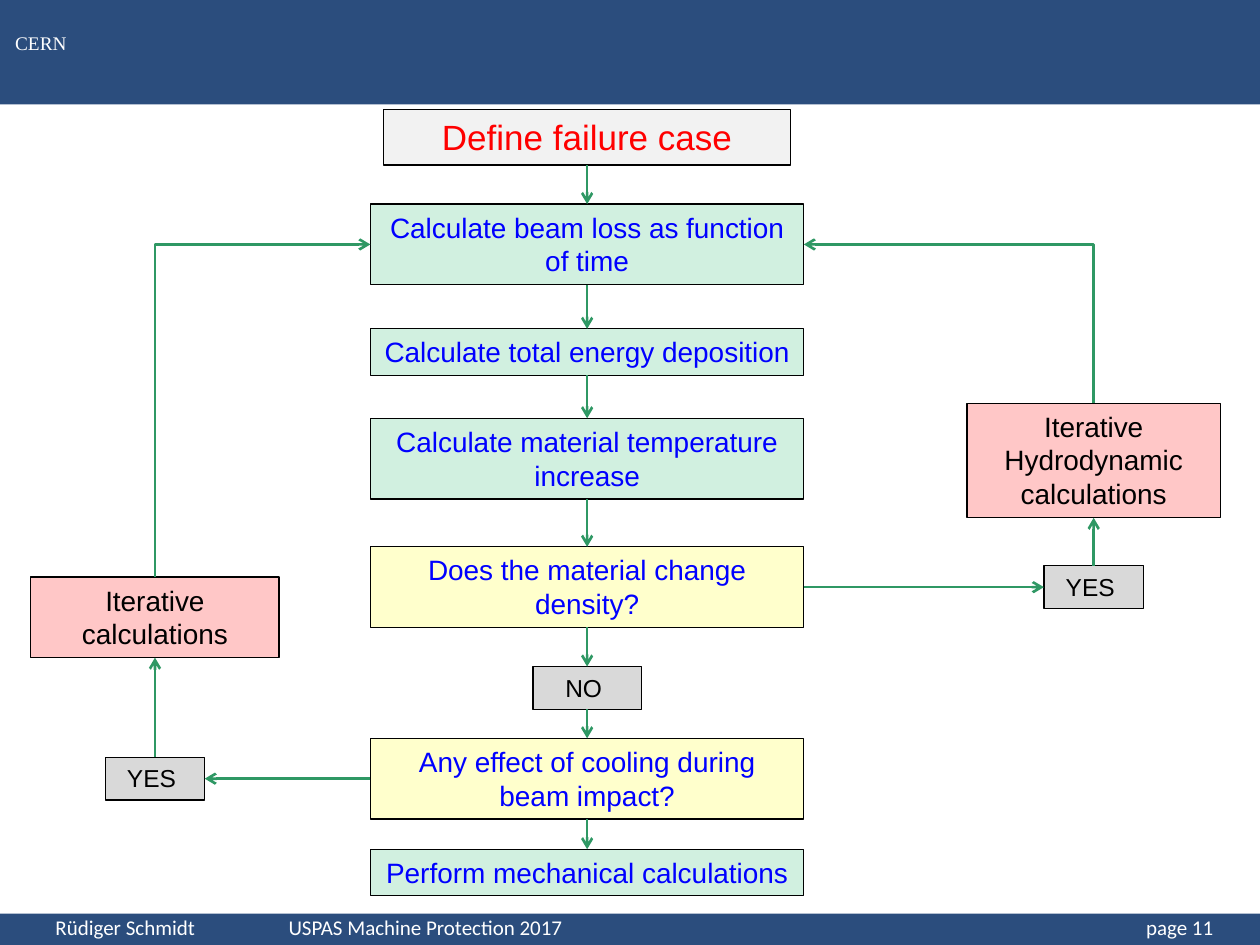
from dataclasses import dataclass

from lxml.etree import SubElement
from pptx import Presentation
from pptx.dml.color import RGBColor
from pptx.enum.shapes import MSO_CONNECTOR, MSO_SHAPE
from pptx.enum.text import MSO_ANCHOR, PP_ALIGN
from pptx.oxml.ns import qn
from pptx.util import Inches, Pt


@dataclass(frozen=True)
class Theme:
    band: str = "062F67"
    white: str = "FFFFFF"
    black: str = "000000"
    blue: str = "0000FF"
    red: str = "FF0000"
    start: str = "F2F2F2"
    step: str = "D1F0E0"
    question: str = "FFFFCC"
    answer: str = "D9D9D9"
    iteration: str = "FFC7C7"
    arrow: str = "2F9864"
    heading_size: int = 20
    step_size: int = 16
    answer_size: int = 14
    footer_size: int = 12
    mark_size: int = 11


theme = Theme()


def write_text(shape, text, size, color, font="Arial", align=PP_ALIGN.CENTER,
               anchor=MSO_ANCHOR.TOP, wrap=True, tabs=()):
    frame = shape.text_frame
    frame.word_wrap = wrap
    frame.vertical_anchor = anchor
    paragraph = frame.paragraphs[0]
    paragraph.text = text
    paragraph.alignment = align
    if tabs:
        tab_list = SubElement(paragraph._p.get_or_add_pPr(), qn("a:tabLst"))
        for position, kind in tabs:
            SubElement(tab_list, qn("a:tab"), pos=str(Inches(position)), algn=kind)
    paragraph.font.name = font
    paragraph.font.size = Pt(size)
    paragraph.font.color.rgb = RGBColor.from_string(color)


def connect(start, start_side, end, end_side, kind=MSO_CONNECTOR.STRAIGHT, arrow_end="a:tailEnd"):
    connector = slide.shapes.add_connector(kind, 0, 0, 0, 0)
    connector.begin_connect(start, start_side)
    connector.end_connect(end, end_side)
    connector.line.color.rgb = RGBColor.from_string(theme.arrow)
    connector.line.width = Pt(1.5)
    SubElement(connector.line._get_or_add_ln(), qn(arrow_end), type="arrow")
    SubElement(connector._element.spPr, qn("a:effectLst"))
    return connector


presentation = Presentation()
presentation.slide_width = Inches(10)
presentation.slide_height = Inches(7.5)
slide = presentation.slides.add_slide(presentation.slide_layouts[6])

for top, height in ((0, 0.83), (7.25, 0.25)):
    band = slide.shapes.add_shape(
        MSO_SHAPE.RECTANGLE, Inches(0), Inches(top), Inches(10), Inches(height))
    band.shadow.inherit = False
    band.fill.solid()
    band.fill.fore_color.rgb = RGBColor.from_string(theme.band)
    band_color = band._element.spPr.find(qn("a:solidFill")).find(qn("a:srgbClr"))
    SubElement(band_color, qn("a:alpha"), val="85000")
    band.line.fill.background()

mark = slide.shapes.add_textbox(Inches(0), Inches(0.2), Inches(0.65), Inches(0.29))
write_text(mark, "CERN", theme.mark_size, theme.white, font="Times New Roman", wrap=False)

footer = slide.shapes.add_textbox(Inches(0), Inches(7.25), Inches(9.83), Inches(0.26))
footer.text_frame.margin_left = Inches(0.44)
write_text(footer, "Rüdiger Schmidt\tUSPAS Machine Protection 2017\tpage 11",
           theme.footer_size, theme.white, font="Calibri", align=PP_ALIGN.LEFT,
           anchor=MSO_ANCHOR.BOTTOM, tabs=((1.85, "l"), (9.19, "r")))

styles = {
    "start": (theme.start, theme.red, theme.heading_size),
    "step": (theme.step, theme.blue, theme.step_size),
    "question": (theme.question, theme.blue, theme.step_size),
    "answer": (theme.answer, theme.black, theme.answer_size),
    "iteration": (theme.iteration, theme.black, theme.step_size),
}
left_center, main_center, right_center = 1.23, 4.66, 8.68
boxes = [
    ("define", "Define failure case", "start", main_center, 0.87, 3.23, 0.44),
    ("loss", "Calculate beam loss as function of time", "step", main_center, 1.62, 3.44, 0.64),
    ("energy", "Calculate total energy deposition", "step", main_center, 2.61, 3.44, 0.37),
    ("temperature", "Calculate material temperature increase", "step",
     main_center, 3.32, 3.44, 0.64),
    ("density", "Does the material change density?", "question", main_center, 4.34, 3.44, 0.64),
    ("no", "NO ", "answer", main_center, 5.29, 0.86, 0.34),
    ("cooling", "Any effect of cooling during beam impact?", "question",
     main_center, 5.86, 3.44, 0.64),
    ("mechanical", "Perform mechanical calculations", "step", main_center, 6.74, 3.44, 0.37),
    ("density_yes", "YES ", "answer", right_center, 4.49, 0.79, 0.34),
    ("hydrodynamic", "Iterative Hydrodynamic calculations", "iteration",
     right_center, 3.2, 2.01, 0.91),
    ("cooling_yes", "YES ", "answer", left_center, 6.01, 0.79, 0.34),
    ("iterative", "Iterative calculations", "iteration", left_center, 4.58, 1.97, 0.64),
]
nodes = {}
for name, text, style, center, top, width, height in boxes:
    fill, color, size = styles[style]
    shape = slide.shapes.add_shape(
        MSO_SHAPE.RECTANGLE, Inches(center - width / 2), Inches(top),
        Inches(width), Inches(height))
    shape.shadow.inherit = False
    shape.fill.solid()
    shape.fill.fore_color.rgb = RGBColor.from_string(fill)
    shape.line.color.rgb = RGBColor.from_string(theme.black)
    shape.line.width = Pt(0.75)
    write_text(shape, text, size, color, wrap=style != "answer")
    nodes[name] = shape

main_column = ["define", "loss", "energy", "temperature", "density", "no", "cooling", "mechanical"]
for upper, lower in zip(main_column, main_column[1:]):
    connect(nodes[upper], 2, nodes[lower], 0)

connect(nodes["density"], 3, nodes["density_yes"], 1)
connect(nodes["density_yes"], 0, nodes["hydrodynamic"], 2)
connect(nodes["cooling"], 1, nodes["cooling_yes"], 3)
connect(nodes["cooling_yes"], 0, nodes["iterative"], 2)

for side, name in ((1, "iterative"), (3, "hydrodynamic")):
    feedback = connect(nodes["loss"], side, nodes[name], 0, MSO_CONNECTOR.ELBOW, "a:headEnd")
    feedback._element.spPr.find(qn("a:prstGeom")).set("prst", "bentConnector2")

presentation.save("out.pptx")
